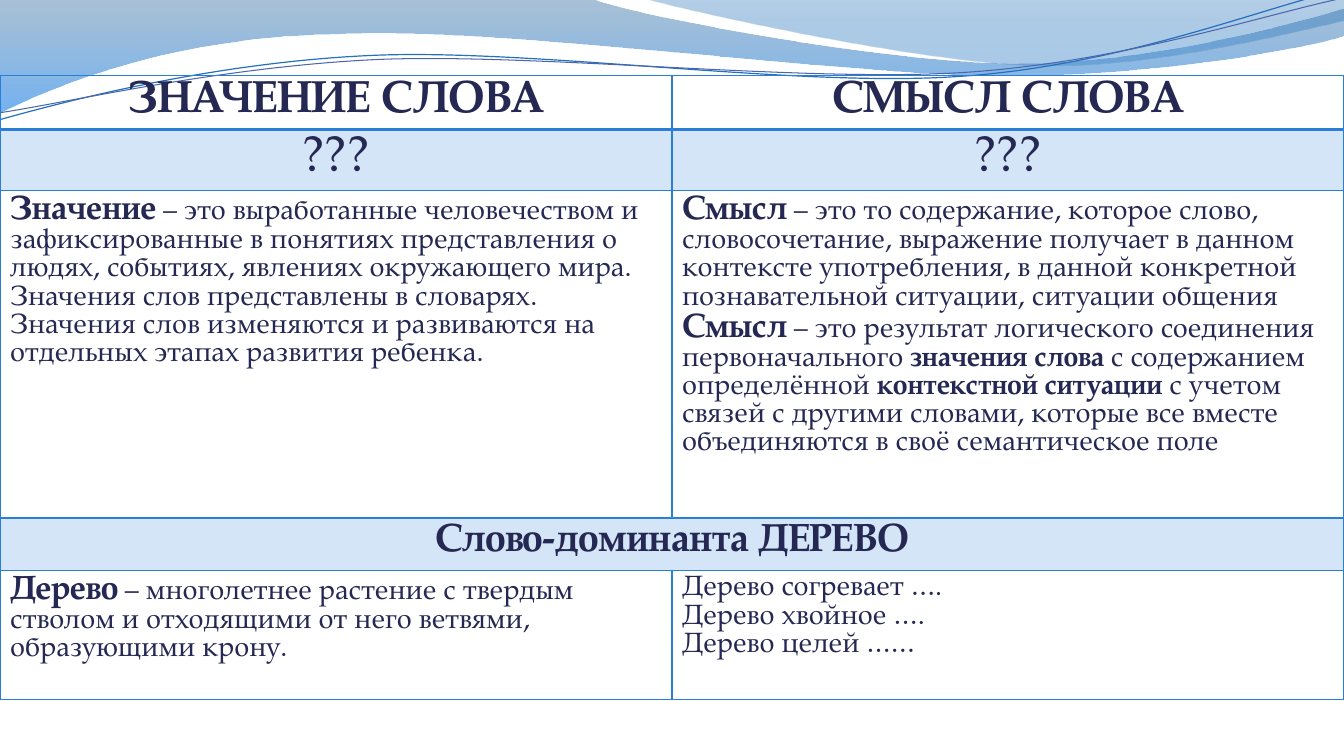
from math import cos, radians, sin

from lxml.etree import SubElement
from pptx import Presentation
from pptx.dml.color import RGBColor
from pptx.enum.text import PP_ALIGN
from pptx.oxml import parse_xml
from pptx.oxml.ns import nsdecls, qn
from pptx.util import Inches, Pt

FONT = "TeX Gyre Pagella"
COLORS = {
    "text": "242852", "border": "297FD5", "band": "D4E5F7",
    "wave top": "4075A3", "wave bottom": "0073E7",
    "crest top": "0B5EB1", "crest bottom": "438CCC",
    "upper line": "2470BC", "lower line": "4A66AC",
}


def draw_outline(shapes, start, segments, closed=True):
    """Draw straight (1 point) and cubic (3 points) segments, in inches."""
    builder = shapes.build_freeform(Inches(start[0]), Inches(start[1]), scale=1.0)
    anchors = [(Inches(x), Inches(y)) for x, y in (segment[-1] for segment in segments)]
    builder.add_line_segments(anchors, close=closed)
    shape = builder.convert_to_shape()
    shape.shadow.inherit = False
    steps = list(shape._element.iter(qn("a:lnTo")))
    for step, segment in zip(steps, segments):
        if len(segment) == 3:
            curve = parse_xml(f'<a:cubicBezTo {nsdecls("a")}/>')
            for x, y in segment:
                point = SubElement(curve, qn("a:pt"))
                point.set("x", str(Inches(x) - shape.left))
                point.set("y", str(Inches(y) - shape.top))
            step.getparent().replace(step, curve)
    return shape


def add_text(para, text, size=20, bold=False, align=PP_ALIGN.LEFT):
    para.alignment = align
    span = para.add_run()
    span.text = text
    span.font.name = FONT
    span.font.size = Pt(size)
    span.font.bold = bold
    span.font.color.rgb = RGBColor.from_string(COLORS["text"])


deck = Presentation()
deck.slide_width = Inches(13.33)
deck.slide_height = Inches(7.5)
page = deck.slides.add_slide(deck.slide_layouts[6])

# Waves: name, start, segments, (stop position, opacity in percent)
waves = [
    ("wave", (0, 0),
     [[(5.87, -0.01)],
      [(6.34, 0.17), (8.84, 0.63), (10.11, 0.63)],
      [(11.37, 0.63), (12.77, 0.26), (13.33, 0.09)],
      [(13.34, 0.36)],
      [(13.11, 0.44), (11.59, 0.76), (9.94, 0.75)],
      [(8.29, 0.75), (5.09, 0.28), (3.43, 0.34)],
      [(1.72, 0.36), (0.61, 0.83), (-0.02, 1.13)]],
     [(0, 45), (1, 55)]),
    ("crest", (6.38, -0.01),
     [[(6.79, 0.11), (9.09, 0.62), (10.25, 0.65)],
      [(11.4, 0.69), (12.82, 0.32), (13.33, 0.21)],
      [(13.33, 0)]],
     [(0, 30), (0.8, 45)]),
]
for name, start, segments, stops in waves:
    wave = draw_outline(page.shapes, start, segments)
    wave.line.fill.background()
    wave.fill.gradient()
    wave.fill.gradient_angle = 270
    for stop, side, (position, _) in zip(wave.fill.gradient_stops, ("top", "bottom"), stops):
        stop.position = position
        stop.color.rgb = RGBColor.from_string(COLORS[f"{name} {side}"])
    tints = wave._element.spPr.iter(qn("a:srgbClr"))
    for tint, (_, opacity) in zip(tints, stops):
        SubElement(tint, qn("a:alpha")).set("val", str(opacity * 1000))

# Ripples: name, line width, centre of the turn, points as seen on the slide
TILT = -2.7
ripples = [
    ("upper line", 0.85, (6.65, 0.57),
     [(-0.01, 1.19), (0.63, 1.01), (2.1, 0.62), (3.69, 0.55), (5.27, 0.48),
      (7.89, 0.87), (9.49, 0.76), (11.1, 0.66), (12.51, 0.08), (13.3, -0.1)]),
    ("lower line", 0.75, (6.67, 0.59),
     [(-0.01, 1.12), (0.62, 1.03), (2.18, 0.66), (3.77, 0.59), (5.37, 0.53),
      (7.96, 0.82), (9.55, 0.72), (11.14, 0.62), (12.55, 0.14), (13.33, -0.02)]),
]
cosine, sine = cos(radians(-TILT)), sin(radians(-TILT))
for name, width, (center_x, center_y), points in ripples:
    level = [(center_x + (x - center_x) * cosine - (y - center_y) * sine,
              center_y + (x - center_x) * sine + (y - center_y) * cosine)
             for x, y in points]
    segments = [level[i:i + 3] for i in range(1, len(level), 3)]
    ripple = draw_outline(page.shapes, level[0], segments, closed=False)
    ripple.rotation = TILT
    ripple.fill.background()
    ripple.line.color.rgb = RGBColor.from_string(COLORS[name])
    ripple.line.width = Pt(width)

# Each cell is a list of paragraphs, each paragraph a list of (text, size, bold)
meaning = [
    [("Значение", 24, True),
     (" – это выработанные человечеством и зафиксированные в понятиях представления "
      "о людях, событиях, явлениях окружающего мира.", 20, False)],
    [("Значения слов представлены в словарях.", 20, False)],
    [("Значения слов изменяются и развиваются на отдельных этапах развития ребенка.", 20, False)],
]
sense = [
    [("Смысл", 24, True),
     (" – это то содержание, которое слово, словосочетание, выражение получает в данном "
      "контексте употребления, в данной конкретной познавательной ситуации, "
      "ситуации общения", 20, False)],
    [("Смысл", 24, True),
     (" – это результат логического соединения первоначального ", 20, False),
     ("значения слова", 20, True),
     (" с содержанием определённой ", 20, False),
     ("контекстной ситуации", 20, True),
     (" с учетом связей с другими словами, которые все вместе "
      "объединяются в своё семантическое поле", 20, False)],
]
tree = [
    [("Дерево", 24, True),
     (" – многолетнее растение с твердым стволом и отходящими от него ветвями, "
      "образующими крону.", 20, False)],
]
phrases = [[(f"Дерево {ending}", 20, False)]
           for ending in ("согревает ….", "хвойное ….", "целей ……")]
question = [[("???", 36, False)]]
rows = [
    (0.52, [[[("ЗНАЧЕНИЕ СЛОВА", 32, True)]], [[("СМЫСЛ СЛОВА", 32, True)]]]),
    (0.52, [question, question]),
    (3.25, [meaning, sense]),
    (0.52, [[[("Слово-доминанта ДЕРЕВО", 28, True)]], []]),
    (1.28, [tree, phrases]),
]
centred_rows = (0, 1, 3)
banded_rows = (1, 3)

frame = page.shapes.add_table(len(rows), 2, 0, Inches(0.75), Inches(13.33),
                              Inches(sum(height for height, _ in rows)))
table = frame.table
table.first_row = False
table.horz_banding = False
table.cell(3, 0).merge(table.cell(3, 1))
for column in table.columns:
    column.width = Inches(13.33 / 2)

for row_number, (height, contents) in enumerate(rows):
    table.rows[row_number].height = Inches(height)
    align = PP_ALIGN.CENTER if row_number in centred_rows else PP_ALIGN.LEFT
    for column_number, paragraphs in enumerate(contents):
        cell = table.cell(row_number, column_number)
        if row_number in banded_rows:
            cell.fill.solid()
            cell.fill.fore_color.rgb = RGBColor.from_string(COLORS["band"])
        else:
            cell.fill.background()
        thick_side = {0: "lnB", 1: "lnT"}.get(row_number)
        for place, side in enumerate(("lnL", "lnR", "lnT", "lnB")):
            width = Pt(2 if side == thick_side else 1)
            cell._tc.tcPr.insert(place, parse_xml(
                f'<a:{side} {nsdecls("a")} w="{width}"><a:solidFill>'
                f'<a:srgbClr val="{COLORS["border"]}"/></a:solidFill></a:{side}>'))
        for number, spans in enumerate(paragraphs):
            text_frame = cell.text_frame
            para = text_frame.add_paragraph() if number else text_frame.paragraphs[0]
            for text, size, bold in spans:
                add_text(para, text, size=size, bold=bold, align=align)

deck.save("out.pptx")
